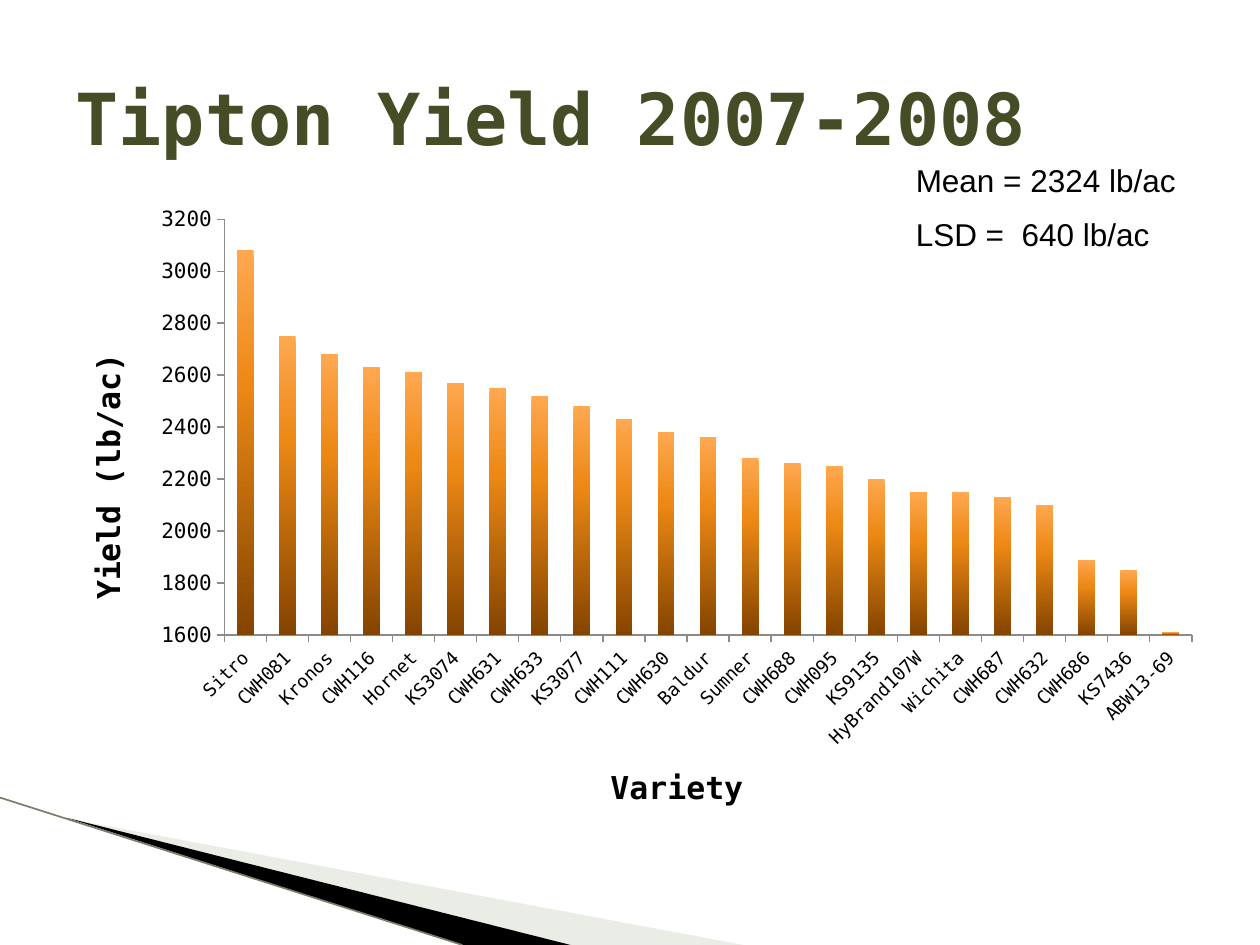
from copy import deepcopy

from lxml import etree
from pptx import Presentation
from pptx.chart.data import CategoryChartData
from pptx.dml.color import RGBColor
from pptx.enum.chart import XL_CHART_TYPE, XL_TICK_MARK
from pptx.enum.shapes import MSO_CONNECTOR
from pptx.enum.text import MSO_ANCHOR, PP_ALIGN
from pptx.oxml import parse_xml
from pptx.oxml.ns import nsdecls, qn
from pptx.util import Inches, Pt

COLUMN = XL_CHART_TYPE.COLUMN_CLUSTERED
OUTSIDE = XL_TICK_MARK.OUTSIDE
STRAIGHT = MSO_CONNECTOR.STRAIGHT
MIDDLE = MSO_ANCHOR.MIDDLE
LEFT = PP_ALIGN.LEFT

BLACK = RGBColor(0x00, 0x00, 0x00)
OLIVE = RGBColor(0x44, 0x4D, 0x26)
SAGE = RGBColor(0xCB, 0xD4, 0xC0)
EDGE = RGBColor(0x7A, 0x7C, 0x68)
GRAY = RGBColor(0x8B, 0x8B, 0x8B)
LIGHT = RGBColor(0xFF, 0xA8, 0x50)
AMBER = RGBColor(0xEC, 0x88, 0x15)
BROWN = RGBColor(0x84, 0x44, 0x00)

MONO = "DejaVu Sans Mono"
SANS = "Arial"
FRAME = (0.48, 1.54, 9.17, 5.11)

YIELDS = {
    "Sitro": 3080, "CWH081": 2750, "Kronos": 2680, "CWH116": 2630,
    "Hornet": 2610, "KS3074": 2570, "CWH631": 2550, "CWH633": 2520,
    "KS3077": 2480, "CWH111": 2430, "CWH630": 2380, "Baldur": 2360,
    "Sumner": 2280, "CWH688": 2260, "CWH095": 2250, "KS9135": 2200,
    "HyBrand107W": 2150, "Wichita": 2150, "CWH687": 2130, "CWH632": 2100,
    "CWH686": 1890, "KS7436": 1850, "ABW13-69": 1610,
}


def style(font, size, name=MONO, color=BLACK, bold=False):
    font.size, font.name, font.bold = Pt(size), name, bold
    font.color.rgb = color


def write(frame, text, gap=0, **look):
    for i, line in enumerate(text.split("\n")):
        para = frame.paragraphs[0] if i == 0 else frame.add_paragraph()
        para.alignment = LEFT
        if i:
            para.space_before = Pt(gap)
        run = para.add_run()
        run.text = line
        style(run.font, **look)


def place(node, x, y, w=None, h=None):
    left, top, wide, high = FRAME
    size = f'<c:w val="{w / wide}"/><c:h val="{h / high}"/>' if w else ""
    inner = '<c:layoutTarget val="inner"/>' if w else ""
    spot = parse_xml(
        f'<c:layout {nsdecls("c")}><c:manualLayout>{inner}'
        f'<c:xMode val="edge"/><c:yMode val="edge"/>'
        f'<c:x val="{(x - left) / wide}"/><c:y val="{(y - top) / high}"/>'
        f'{size}</c:manualLayout></c:layout>')
    for old in node.findall(qn("c:layout")):
        node.remove(old)
    text = node.find(qn("c:tx"))
    if text is None:
        node.insert(0, spot)
    else:
        text.addnext(spot)


class Deck:
    """Hold the style and the current slide, with a method for each element."""

    def __init__(self):
        self.show = Presentation()
        self.show.slide_width, self.show.slide_height = Inches(10), Inches(7.5)
        self.slide = self.show.slides.add_slide(self.show.slide_layouts[5])
        self.shapes = self.slide.shapes

    def title(self, text, x, y, w, h, **look):
        box = self.shapes.title
        box.left, box.top, box.width, box.height = map(Inches, (x, y, w, h))
        box.text_frame.vertical_anchor = MIDDLE
        write(box.text_frame, text, **look)

    def text(self, text, x, y, w, h, **look):
        box = self.shapes.add_textbox(*map(Inches, (x, y, w, h)))
        box.text_frame.word_wrap = True
        write(box.text_frame, text, **look)

    def wedge(self, points, color, alpha=100):
        spots = [(Inches(x), Inches(y)) for x, y in points]
        pen = self.shapes.build_freeform(*spots[0])
        pen.add_line_segments(spots[1:], close=True)
        shape = pen.convert_to_shape()
        shape.shadow.inherit = False
        shape.fill.solid()
        shape.fill.fore_color.rgb = color
        shape.line.fill.background()
        if alpha < 100:
            tint = shape._element.spPr.find(qn("a:solidFill"))[0]
            etree.SubElement(tint, qn("a:alpha"), val=str(alpha * 1000))

    def line(self, x1, y1, x2, y2, color, width):
        line = self.shapes.add_connector(STRAIGHT, *map(Inches, (x1, y1, x2, y2)))
        line.line.color.rgb = color
        line.line.width = Pt(width)
        etree.SubElement(line._element.spPr, qn("a:effectLst"))

    def axis(self, axis, title, size, x, y):
        axis.has_major_gridlines = False
        axis.major_tick_mark = OUTSIDE
        axis.format.line.color.rgb = GRAY
        style(axis.tick_labels.font, size)
        write(axis.axis_title.text_frame, title, size=18, bold=True)
        place(axis.axis_title._element, x, y)

    def chart(self):
        data = CategoryChartData(number_format="0")
        data.categories = list(YIELDS)
        data.add_series("Series 1", list(YIELDS.values()))
        chart = self.shapes.add_chart(COLUMN, *map(Inches, FRAME), data).chart
        style(chart.font, 18)
        chart.has_legend = chart.has_title = False
        plot = chart.plots[0]
        plot.vary_by_categories = False
        plot.gap_width = 150
        place(chart._chartSpace.chart.plotArea, 1.78, 1.74, 7.68, 3.3)

        cats, vals = chart.category_axis, chart.value_axis
        self.axis(cats, "Variety", 10.5, 4.8, 6.04)
        self.axis(vals, "Yield (lb/ac)", 12, 0.65, 2.76)
        slant = cats._element.find(qn("c:txPr")).find(qn("a:bodyPr"))
        slant.set("rot", "-2700000")
        turn = vals.axis_title.text_frame._txBody.find(qn("a:bodyPr"))
        turn.set("rot", "-5400000")
        turn.set("vert", "horz")
        vals.minimum_scale, vals.maximum_scale = 1600, 3200
        vals.major_unit = 200
        vals.tick_labels.number_format = "0"
        vals.tick_labels.number_format_is_linked = False
        self.shade(plot.series[0])

    def shade(self, bars):
        fill = bars.format.fill
        fill.gradient()
        fill.gradient_angle = 270
        stops = bars._element.find(".//" + qn("a:gsLst"))
        mid = deepcopy(stops[0])
        mid.set("pos", "35000")
        stops.insert(1, mid)
        for stop, color in zip(fill.gradient_stops, (LIGHT, AMBER, BROWN)):
            stop.color.rgb = color


def main():
    deck = Deck()
    deck.wedge([(0.55, 6.5), (5.9, 7.5), (4.52, 7.5)], SAGE, alpha=40)
    deck.wedge([(0.53, 6.49), (4.53, 7.5), (3.67, 7.5)], BLACK)
    deck.line(0, 6.33, 3.67, 7.5, EDGE, 0.95)
    deck.chart()
    deck.title("Tipton Yield 2007-2008", 0.5, 0.3, 9, 1.25,
               size=41, color=OLIVE, bold=True)
    deck.text("Mean = 2324 lb/ac\nLSD =  640 lb/ac", 7.17, 1.23, 2.37, 0.86,
              gap=9, size=18, name=SANS)
    deck.show.save("out.pptx")


if __name__ == "__main__":
    main()
